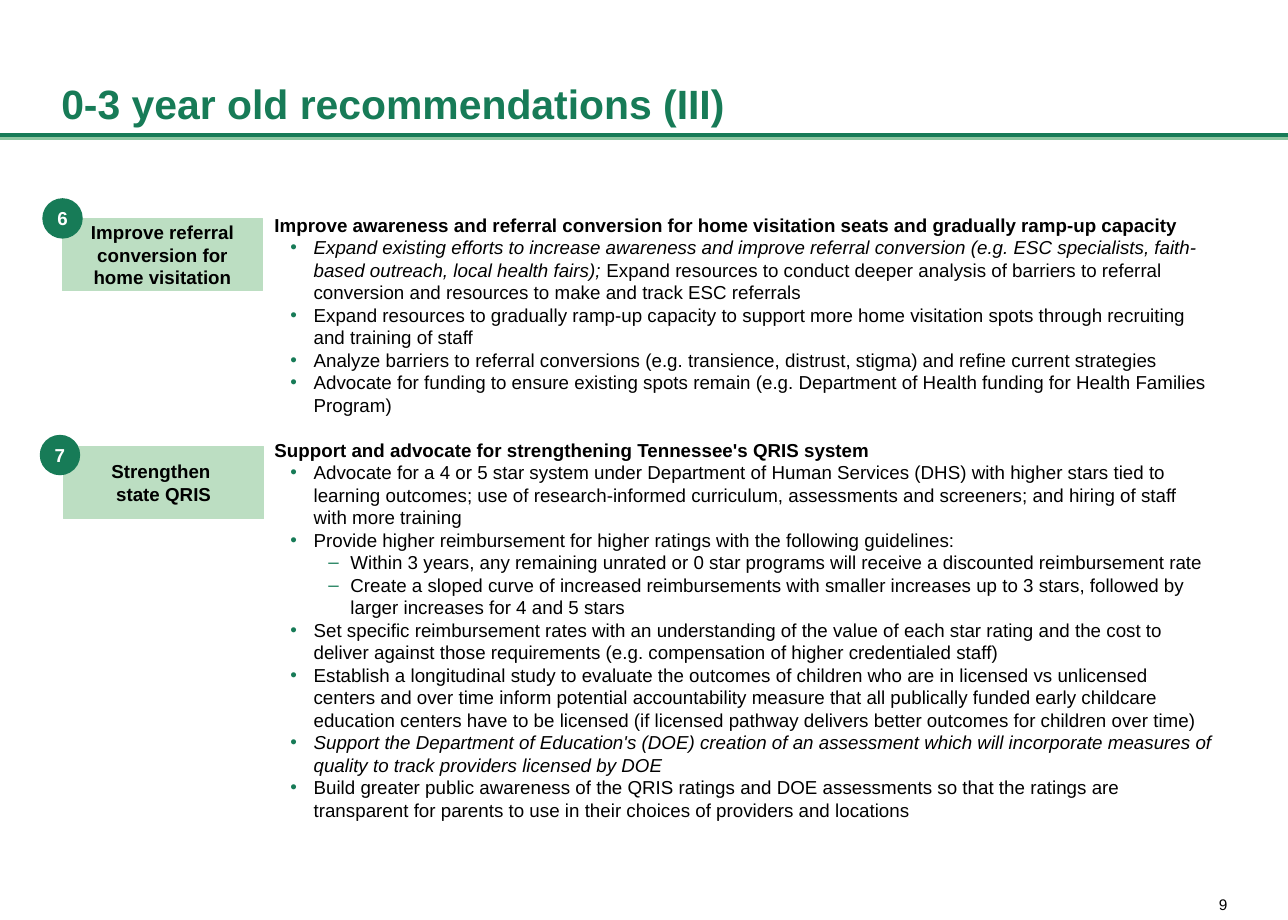
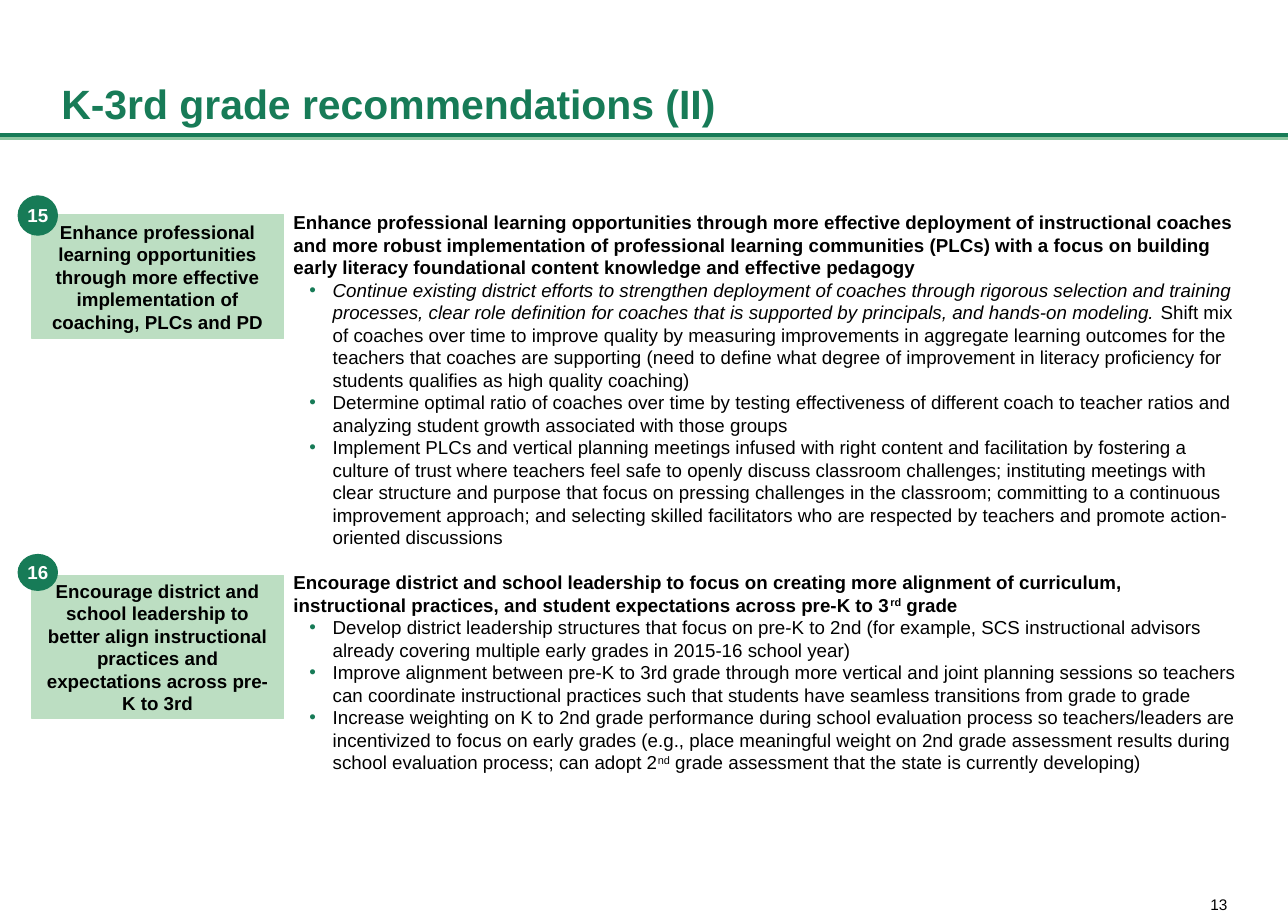
from dataclasses import dataclass

from lxml import etree
from pptx import Presentation
from pptx.dml.color import RGBColor
from pptx.enum.shapes import MSO_CONNECTOR, MSO_SHAPE
from pptx.enum.text import MSO_ANCHOR, PP_ALIGN
from pptx.oxml.ns import qn
from pptx.util import Pt

RECT, OVAL = MSO_SHAPE.RECTANGLE, MSO_SHAPE.OVAL
STRAIGHT = MSO_CONNECTOR.STRAIGHT
TOP, MIDDLE, BOTTOM = MSO_ANCHOR.TOP, MSO_ANCHOR.MIDDLE, MSO_ANCHOR.BOTTOM
LEFT, CENTER, RIGHT = PP_ALIGN.LEFT, PP_ALIGN.CENTER, PP_ALIGN.RIGHT


@dataclass(frozen=True)
class Theme:
    font: str = "Arial"
    green: str = "177B57"
    shade: str = "8EC6A1"
    pale: str = "BCDEC2"
    ink: str = "000000"
    white: str = "FFFFFF"
    title: float = 24
    body: float = 11
    page: float = 9
    pitch: float = 13.2


@dataclass(frozen=True)
class Tag:
    num: str
    label: str
    box: tuple
    dot: tuple  # left and top from the tag's corner, width, height


THEME = Theme()
WIDTH, HEIGHT = 756, 540
RULE = 79.2

# Level of a paragraph: (mark, left margin, hanging indent)
LEVELS = {0: (None, 0, 0), 1: ("•", 23, 13.7), 2: ("–", 44.6, 13)}

# Each paragraph is a level and its runs; a run is text, or text with a style
SLIDES = [
    dict(
        title="0-3 year old recommendations (III)",
        page="9",
        box=(154, 121.7, 566, 234),
        pad=3.6,
        tags=[
            Tag("6", "Improve referral conversion for home visitation",
                (36.7, 128.2, 117.4, 42.5), (-11.5, -11.5, 23, 23)),
            Tag("7", "Strengthen \nstate QRIS",
                (37.4, 262.1, 117.4, 42.5), (-13.7, -6.5, 23, 23)),
        ],
        paras=[
            (0, "Improve awareness and referral conversion for home visitation "
                "seats and gradually ramp-up capacity"),
            (1, ("Expand existing efforts to increase awareness and improve "
                 "referral conversion (e.g. ESC specialists, faith-based "
                 "outreach, local health fairs); ", "italic"),
             "Expand resources to conduct deeper analysis of barriers to "
             "referral conversion and resources to make and track ESC referrals"),
            (1, "Expand resources to gradually ramp-up capacity to support more "
                "home visitation spots through recruiting and training of staff"),
            (1, "Analyze barriers to referral conversions (e.g. transience, "
                "distrust, stigma) and refine current strategies"),
            (1, "Advocate for funding to ensure existing spots remain (e.g. "
                "Department of Health funding for Health Families Program)"),
            (0, "Support and advocate for strengthening Tennessee's QRIS system"),
            (1, "Advocate for a 4 or 5 star system under Department of Human "
                "Services (DHS) with higher stars tied to learning outcomes; use "
                "of research-informed curriculum, assessments and screeners; and "
                "hiring of staff with more training"),
            (1, "Provide higher reimbursement for higher ratings with the "
                "following guidelines:"),
            (2, "Within 3 years, any remaining unrated or 0 star programs will "
                "receive a discounted reimbursement rate"),
            (2, "Create a sloped curve of increased reimbursements with smaller "
                "increases up to 3 stars, followed by larger increases for 4 and "
                "5 stars"),
            (1, "Set specific reimbursement rates with an understanding of the "
                "value of each star rating and the cost to deliver against those "
                "requirements (e.g. compensation of higher credentialed staff)"),
            (1, "Establish a longitudinal study to evaluate the outcomes of "
                "children who are in licensed vs unlicensed centers and over "
                "time inform potential accountability measure that all "
                "publically funded early childcare education centers have to be "
                "licensed (if licensed pathway delivers better outcomes for "
                "children over time)"),
            (1, ("Support the Department of Education's (DOE) creation of an "
                 "assessment which will incorporate measures of quality to track "
                 "providers licensed by DOE", "italic")),
            (1, "Build greater public awareness of the QRIS ratings and DOE "
                "assessments so that the ratings are transparent for parents to "
                "use in their choices of providers and locations"),
        ],
    ),
    dict(
        title="K-3rd grade recommendations (II)",
        page="13",
        box=(165.2, 116.6, 570.4, 283),
        pad=7.2,
        tags=[
            Tag("15", "Enhance professional learning opportunities through more "
                "effective implementation of coaching, PLCs and PD",
                (18.7, 126, 147.6, 72.7), (-8, -11, 23, 23)),
            Tag("16", "Encourage district and school leadership to better align "
                "instructional practices and expectations across pre-K to 3rd",
                (18.7, 337.7, 147.6, 84.2), (-8, -12.2, 23, 21)),
        ],
        paras=[
            (0, "Enhance professional learning opportunities through more "
                "effective deployment of instructional coaches and more robust "
                "implementation of professional learning communities (PLCs) with "
                "a focus on building early literacy foundational content "
                "knowledge and effective pedagogy"),
            (1, ("Continue existing district efforts to strengthen deployment of "
                 "coaches through rigorous selection and training processes, "
                 "clear role definition for coaches that is supported by "
                 "principals, and hands-on modeling. ", "italic"),
             "Shift mix of coaches over time to improve quality by measuring "
             "improvements in aggregate learning outcomes for the teachers that "
             "coaches are supporting (need to define what degree of improvement "
             "in literacy proficiency for students qualifies as high quality "
             "coaching)"),
            (1, "Determine optimal ratio of coaches over time by testing "
                "effectiveness of different coach to teacher ratios and "
                "analyzing student growth associated with those groups"),
            (1, "Implement PLCs and vertical planning meetings infused with "
                "right content and facilitation by fostering a culture of trust "
                "where teachers feel safe to openly discuss classroom "
                "challenges; instituting meetings with clear structure and "
                "purpose that focus on pressing challenges in the classroom; "
                "committing to a continuous improvement approach; and selecting "
                "skilled facilitators who are respected by teachers and promote "
                "action-oriented discussions"),
            (0, "Encourage district and school leadership to focus on creating "
                "more alignment of curriculum, instructional practices, and "
                "student expectations across pre-K to 3",
             ("rd", "super"), " grade"),
            (1, "Develop district leadership structures that focus on pre-K to "
                "2nd (for example, SCS instructional advisors already covering "
                "multiple early grades in 2015-16 school year)"),
            (1, "Improve alignment between pre-K to 3rd grade through more "
                "vertical and joint planning sessions so teachers can coordinate "
                "instructional practices such that students have seamless "
                "transitions from grade to grade"),
            (1, "Increase weighting on K to 2nd grade performance during school "
                "evaluation process so teachers/leaders are incentivized to "
                "focus on early grades (e.g., place meaningful weight on 2nd "
                "grade assessment results during school evaluation process; can "
                "adopt 2", ("nd", "super"),
             " grade assessment that the state is currently developing)"),
        ],
    ),
]


def color(code):
    return RGBColor.from_string(code)


def place(box):
    return [Pt(round(side, 2)) for side in box]


def set_frame(shape, anchor, pad_x, pad_y, wrap=True):
    frame = shape.text_frame
    frame.word_wrap = wrap
    frame.vertical_anchor = anchor
    frame.margin_left = frame.margin_right = Pt(pad_x)
    frame.margin_top = frame.margin_bottom = Pt(pad_y)
    return frame


def add_run(para, text, size, ink, bold=False, style=""):
    run = para.add_run()
    run.text = text
    font = run.font
    font.name, font.size, font.bold = THEME.font, Pt(size), bold
    font.italic = style == "italic"
    font.color.rgb = color(ink)
    if style == "super":
        font._element.set("baseline", "30000")


def add_text(slide, box, text, size, ink, anchor, align, bold=False, pad_y=0):
    shape = slide.shapes.add_textbox(*place(box))
    para = set_frame(shape, anchor, 0, pad_y).paragraphs[0]
    para.alignment = align
    add_run(para, text, size, ink, bold)


def add_label(slide, kind, box, fill, text, ink, pad, wrap):
    """Draw a filled shape with bold centred text."""
    shape = slide.shapes.add_shape(kind, *place(box))
    shape.shadow.inherit = False
    shape.fill.solid()
    shape.fill.fore_color.rgb = shape.line.color.rgb = color(fill)
    shape.line.width = Pt(0.75)
    para = set_frame(shape, MIDDLE, pad, pad, wrap).paragraphs[0]
    para.alignment = CENTER
    para.line_spacing = Pt(THEME.pitch)
    for row, part in enumerate(text.split("\n")):
        if row:
            para.add_line_break()
        add_run(para, part, THEME.body, ink, True)


def add_tag(slide, tag):
    left, top = tag.box[:2]
    dx, dy, wide, high = tag.dot
    add_label(slide, RECT, tag.box, THEME.pale, tag.label, THEME.ink, 7.2, True)
    add_label(slide, OVAL, (left + dx, top + dy, wide, high), THEME.green,
              tag.num, THEME.white, 0, False)


def set_bullet(para, level):
    mark, left, hang = LEVELS[level]
    if not mark:
        return
    props = para._p.get_or_add_pPr()
    props.set("marL", str(Pt(left)))
    props.set("indent", str(-Pt(hang)))
    props.set("lvl", str(level))
    tint = etree.SubElement(props, qn("a:buClr"))
    etree.SubElement(tint, qn("a:srgbClr"), val=THEME.green)
    etree.SubElement(props, qn("a:buFont"), typeface=THEME.font)
    etree.SubElement(props, qn("a:buChar"), char=mark)


def add_body(slide, box, pad, paras):
    shape = slide.shapes.add_textbox(*place(box))
    frame = set_frame(shape, TOP, 7.2, pad)
    for index, (level, *runs) in enumerate(paras):
        para = frame.add_paragraph() if index else frame.paragraphs[0]
        set_bullet(para, level)
        para.line_spacing = Pt(THEME.pitch)
        para.space_before = Pt(THEME.pitch if index and not level else 0)
        for run in runs:
            text, style = (run, "") if isinstance(run, str) else run
            add_run(para, text, THEME.body, THEME.ink, level == 0, style)


def add_rule(slide, top, tint):
    line = slide.shapes.add_connector(STRAIGHT, *place((0, top, WIDTH, top)))
    line.line.color.rgb = color(tint)
    line.line.width = Pt(2.25)
    etree.SubElement(line._element.spPr, qn("a:effectLst"))


def add_chrome(slide, title, page):
    """Add the title, the double rule and the page number."""
    add_rule(slide, RULE + 2, THEME.shade)
    add_rule(slide, RULE, THEME.green)
    add_text(slide, (36, 13, 684, 65.5), title, THEME.title, THEME.green,
             BOTTOM, LEFT, True, 3.6)
    add_text(slide, (690, 525.6, 30.4, 10), page, THEME.page, THEME.ink,
             TOP, RIGHT)


def main():
    deck = Presentation()
    deck.slide_width, deck.slide_height = Pt(WIDTH), Pt(HEIGHT)
    for data in SLIDES:
        slide = deck.slides.add_slide(deck.slide_layouts[6])
        add_chrome(slide, data["title"], data["page"])
        add_body(slide, data["box"], data["pad"], data["paras"])
        for tag in data["tags"]:
            add_tag(slide, tag)
    deck.save("out.pptx")


if __name__ == "__main__":
    main()
